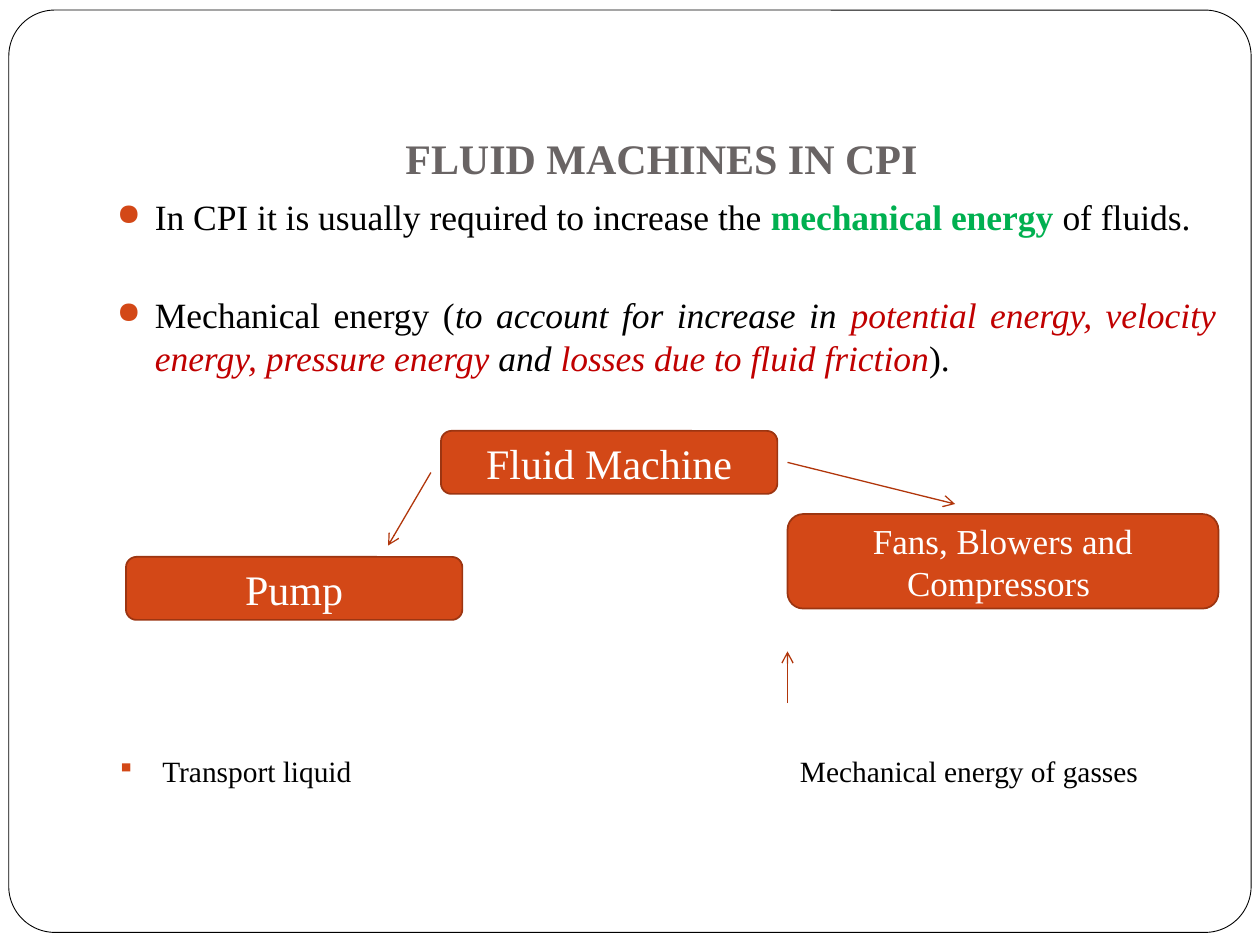
"""Build the slide on fluid machines in the chemical process industry."""
from lxml.etree import SubElement
from pptx import Presentation
from pptx.dml.color import RGBColor
from pptx.enum.shapes import MSO_CONNECTOR, MSO_SHAPE
from pptx.enum.text import MSO_ANCHOR, PP_ALIGN
from pptx.oxml.ns import qn
from pptx.util import Inches, Pt

COLORS = {"paper": "FFFFFF", "ink": "000000", "title": "696464", "accent": "D34817",
          "border": "9C3511", "arrow": "B1360B", "green": "00B050", "red": "C00000"}
FONT = "Times New Roman"
TITLE = "FLUID MACHINES IN CPI"
SPACE = 5.8
EMPTY_LINE = 26

# (bullet, size, indent, empty lines above, runs of text, colour, bold, italic)
BULLETS = [
    ("●", 20.3, 0.3, 0, [
        ("In CPI it is usually required to increase the ", "ink", False, False),
        ("mechanical energy ", "green", True, False),
        ("of fluids.", "ink", False, False)]),
    ("●", 20.3, 0.3, 1, [
        ("Mechanical energy (", "ink", False, False),
        ("to account for increase in ", "ink", False, True),
        ("potential energy, velocity energy, pressure energy", "red", False, True),
        (" and ", "ink", False, True),
        ("losses due to fluid friction", "red", False, True),
        (").", "ink", False, False)]),
    ("▪", 16.8, 0.36, 8, [("Transport liquid", "ink", False, False)]),
]
GAS_NOTE = "Mechanical energy of gasses"
MACHINES = [
    ("Fluid Machine", 24, (3.5, 3.42, 2.67, 0.5)),
    ("Fans, Blowers and Compressors ", 20, (6.25, 4.08, 3.42, 0.75)),
    ("Pump", 24, (1, 4.42, 2.67, 0.5)),
]
ARROWS = [(3.42, 3.75, 3.08, 4.33), (6.25, 3.67, 7.58, 4), (6.25, 5.58, 6.25, 5.17)]


def color(name):
    return RGBColor.from_string(COLORS[name])


def set_font(font, size, ink, bold=False):
    font.name, font.size, font.bold = FONT, Pt(size), bold
    font.color.rgb = color(ink)


def add_text(slide, box, anchor=MSO_ANCHOR.TOP):
    frame = slide.shapes.add_textbox(*map(Inches, box)).text_frame
    frame.word_wrap = True
    frame.vertical_anchor = anchor
    return frame


def add_round_box(slide, box, fill, line, width):
    shape = slide.shapes.add_shape(MSO_SHAPE.ROUNDED_RECTANGLE, *map(Inches, box))
    shape.shadow.inherit = False
    shape.fill.solid()
    shape.fill.fore_color.rgb = color(fill)
    shape.line.color.rgb = color(line)
    shape.line.width = Pt(width)
    return shape


def set_bullet(paragraph, mark, indent):
    properties = paragraph._p.get_or_add_pPr()
    properties.set("marL", str(Inches(indent)))
    properties.set("indent", str(-Inches(indent)))
    tint = SubElement(properties, qn("a:buClr"))
    SubElement(tint, qn("a:srgbClr"), val=COLORS["accent"])
    SubElement(properties, qn("a:buSzPct"), val="85000")
    SubElement(properties, qn("a:buChar"), char=mark)


def add_bullets(slide):
    frame = add_text(slide, (0.83, 1.5, 8.92, 5))
    for index, (mark, size, indent, empty_lines, runs) in enumerate(BULLETS):
        paragraph = frame.add_paragraph() if index else frame.paragraphs[0]
        paragraph.alignment = PP_ALIGN.JUSTIFY
        paragraph.space_before = Pt(SPACE + EMPTY_LINE * empty_lines)
        set_bullet(paragraph, mark, indent)
        for text, ink, bold, italic in runs:
            run = paragraph.add_run()
            run.text = text
            set_font(run.font, size, ink, bold)
            run.font.italic = italic


def add_machine(slide, label, size, box):
    frame = add_round_box(slide, box, "accent", "border", 1).text_frame
    frame.word_wrap = True
    frame.vertical_anchor = MSO_ANCHOR.MIDDLE
    paragraph = frame.paragraphs[0]
    paragraph.text = label
    paragraph.alignment = PP_ALIGN.CENTER
    set_font(paragraph.font, size, "paper")


def add_arrow(slide, ends):
    arrow = slide.shapes.add_connector(MSO_CONNECTOR.STRAIGHT, *map(Inches, ends))
    arrow.line.color.rgb = color("arrow")
    arrow.line.width = Pt(0.75)
    SubElement(arrow.line._get_or_add_ln(), qn("a:tailEnd"), type="arrow")
    SubElement(arrow._element.spPr, qn("a:effectLst"))


def main():
    deck = Presentation()
    deck.slide_width, deck.slide_height = Inches(10), Inches(7.5)
    slide = deck.slides.add_slide(deck.slide_layouts[6])

    frame = add_round_box(slide, (0.07, 0.08, 9.86, 7.32), "paper", "ink", 0.5)
    frame.adjustments[0] = 0.05

    title_frame = add_text(slide, (1, 0.3, 8.5, 1.25), MSO_ANCHOR.BOTTOM)
    title_frame.margin_bottom = Inches(0.1)
    title = title_frame.paragraphs[0]
    title.text = TITLE
    title.alignment = PP_ALIGN.CENTER
    set_font(title.font, 24, "title", True)

    add_bullets(slide)
    gas_note = add_text(slide, (6.25, 5.93, 3.42, 0.4)).paragraphs[0]
    gas_note.text = GAS_NOTE
    set_font(gas_note.font, 16.8, "ink")

    for machine in MACHINES:
        add_machine(slide, *machine)
    for ends in ARROWS:
        add_arrow(slide, ends)
    deck.save("out.pptx")


if __name__ == "__main__":
    main()
